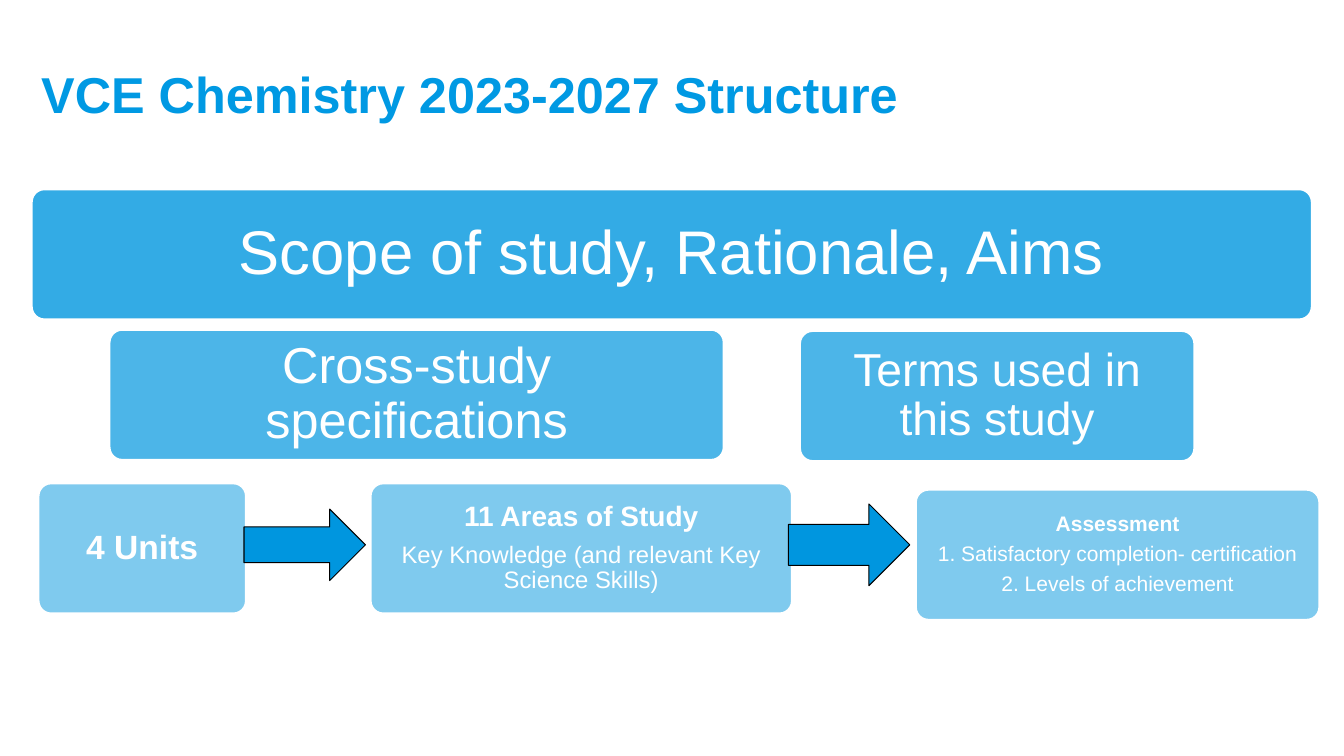
from lxml import etree
from pptx import Presentation
from pptx.dml.color import RGBColor
from pptx.enum.shapes import MSO_SHAPE
from pptx.enum.text import MSO_ANCHOR, PP_ALIGN
from pptx.oxml.ns import qn
from pptx.util import Cm, Pt

BLUE, WHITE, BLACK = "0096DF", "FFFFFF", "000000"
HIGH = 3.3  # height of every box, in cm


def paint(target, color):
    target.rgb = RGBColor.from_string(color)


def fill(shape, color, alpha=100):
    shape.fill.solid()
    paint(shape.fill.fore_color, color)
    if alpha < 100:
        tint = shape.fill._xPr.find(qn("a:solidFill"))[0]
        etree.SubElement(tint, qn("a:alpha"), val=str(alpha * 1000))


def outline(shape, color, width):
    paint(shape.line.color, color)
    shape.line.width = Pt(width)


def write(shape, lines, inset=0.25, align=PP_ALIGN.CENTER, color=WHITE,
          leading=0.9, after=0.35):
    """Each line is (text, size, bold); after is a share of the size."""
    frame = shape.text_frame
    frame.word_wrap = True
    frame.vertical_anchor = MSO_ANCHOR.MIDDLE
    frame.margin_left = frame.margin_right = Cm(inset)
    frame.margin_top = frame.margin_bottom = Cm(inset)
    for i, (text, size, bold) in enumerate(lines):
        para = frame.add_paragraph() if i else frame.paragraphs[0]
        para.alignment = align
        para.line_spacing = leading
        para.space_after = Pt(size * after)
        run = para.add_run()
        run.text = text
        font = run.font
        font.name, font.size, font.bold = "Arial", Pt(size), bold
        paint(font.color, color)


def title(slide, text):
    box = slide.shapes.add_textbox(Cm(0.79), Cm(0.76), Cm(32.26), Cm(3.18))
    write(box, [(text, 36, True)], align=PP_ALIGN.LEFT, color="0099E3",
          leading=1.0, after=0)


def box(slide, left, top, width, alpha, inset, *lines):
    shape = slide.shapes.add_shape(MSO_SHAPE.ROUNDED_RECTANGLE, Cm(left),
                                   Cm(top), Cm(width), Cm(HIGH))
    shape.adjustments[0] = 0.1
    shape.shadow.inherit = False
    fill(shape, BLUE, alpha)
    outline(shape, WHITE, 2)
    write(shape, lines, inset=inset)


def arrow(slide, left, top, height):
    shape = slide.shapes.add_shape(MSO_SHAPE.RIGHT_ARROW, Cm(left), Cm(top),
                                   Cm(3.06), Cm(height))
    shape.shadow.inherit = False
    fill(shape, BLUE)
    outline(shape, BLACK, 0.75)


def main():
    deck = Presentation()
    deck.slide_width, deck.slide_height = Cm(33.87), Cm(19.05)
    slide = deck.slides.add_slide(deck.slide_layouts[6])
    title(slide, "VCE Chemistry 2023-2027 Structure")

    # Whole study
    box(slide, 0.79, 4.76, 32.28, 80, 0.46,
        ("Scope of study, Rationale, Aims", 44, False))

    # Shared parts
    box(slide, 2.75, 8.3, 15.5, 70, 0.38,
        ("Cross-study specifications", 36, False))
    box(slide, 20.15, 8.33, 9.96, 70, 0.36,
        ("Terms used in this study", 33, False))

    # Units, areas and assessment
    box(slide, 0.96, 12.17, 5.25, 50, 0.25, ("4 Units", 24, True))
    box(slide, 9.33, 12.17, 10.64, 50, 0.2,
        ("11 Areas of Study", 20, True),
        ("Key Knowledge (and relevant Key Science Skills)", 17, False))
    box(slide, 23.07, 12.33, 10.19 - 0.19 + 0.19, 50, 0.15,
        ("Assessment", 15, True),
        ("1. Satisfactory completion- certification", 15, False),
        ("2. Levels of achievement", 15, False))

    # Steps between them
    arrow(slide, 6.15, 12.83, 1.8)
    arrow(slide, 19.87, 12.7, 2.06)

    deck.save("out.pptx")


if __name__ == "__main__":
    main()
